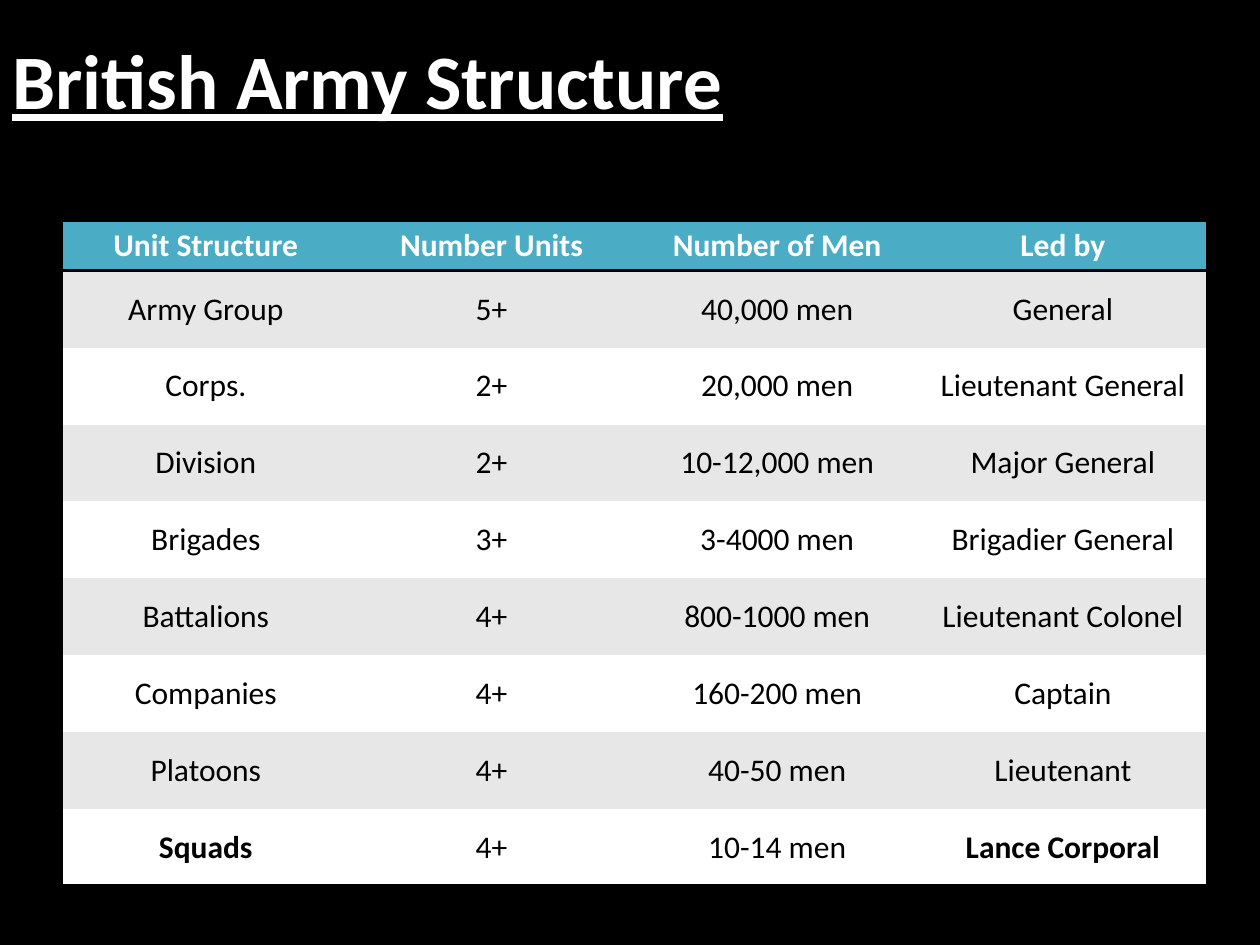
from lxml import etree
from pptx import Presentation
from pptx.dml.color import RGBColor
from pptx.enum.text import MSO_ANCHOR, PP_ALIGN
from pptx.oxml.ns import qn
from pptx.util import Inches, Pt

MIDDLE = MSO_ANCHOR.MIDDLE
CENTER = PP_ALIGN.CENTER
FONT = "Calibri"
PLAIN_STYLE = "{2D5ABB26-0587-4C30-8999-92F81FD0307C}"  # no fill, no grid
COLORS = {
    "black": "000000",
    "white": "FFFFFF",
    "teal": "4BACC6",
    "gray": "E7E7E7",
}
ROWS = [
    ("Unit Structure", "Number Units", "Number of Men", "Led by"),
    ("Army Group", "5+", "40,000 men", "General"),
    ("Corps.", "2+", "20,000 men", "Lieutenant General"),
    ("Division", "2+", "10-12,000 men", "Major General"),
    ("Brigades", "3+", "3-4000 men", "Brigadier General"),
    ("Battalions", "4+", "800-1000 men", "Lieutenant Colonel"),
    ("Companies", "4+", "160-200 men", "Captain"),
    ("Platoons", "4+", "40-50 men", "Lieutenant"),
    ("Squads", "4+", "10-14 men", "Lance Corporal"),
]
BOLD = {"Squads", "Lance Corporal"}


def rgb(name):
    return RGBColor.from_string(COLORS[name])


def set_font(para, size, color, bold):
    font = para.font
    font.name = FONT
    font.size = Pt(size)
    font.bold = bold
    font.color.rgb = rgb(color)


def add_title(slide, text):
    box = slide.shapes.add_textbox(0, 0, Inches(9), Inches(1.25))
    frame = box.text_frame
    frame.word_wrap = True
    frame.vertical_anchor = MIDDLE
    para = frame.paragraphs[0]
    para.text = text
    set_font(para, 44, "white", True)
    para.font.underline = True


def add_border(cell, side):
    """Draw a black rule on side "T" or "B"; call before the fill is set."""
    props = cell._tc.get_or_add_tcPr()
    line = etree.SubElement(props, qn(f"a:ln{side}"), w=str(Pt(2)))
    fill = etree.SubElement(line, qn("a:solidFill"))
    etree.SubElement(fill, qn("a:srgbClr"), val=COLORS["black"])


def fill_cell(cell, text, back, color, bold, sides):
    for side in sides:
        add_border(cell, side)
    cell.fill.solid()
    cell.fill.fore_color.rgb = rgb(back)
    cell.vertical_anchor = MIDDLE
    para = cell.text_frame.paragraphs[0]
    para.text = text
    para.alignment = CENTER
    set_font(para, 18, color, bold)


def add_units(slide):
    count = len(ROWS)
    frame = slide.shapes.add_table(
        count, len(ROWS[0]), Inches(0.5), Inches(1.75), Inches(9.07), Inches(5.26)
    )
    table = frame.table
    table._tbl.tblPr.find(qn("a:tableStyleId")).text = PLAIN_STYLE
    for r, texts in enumerate(ROWS):
        head = r == 0
        table.rows[r].height = Inches(0.39 if head else 0.61)
        back = "teal" if head else "gray" if r % 2 else "white"
        color = "white" if head else "black"
        sides = "TB" if head else "B" if r == count - 1 else ""
        for c, text in enumerate(texts):
            bold = head or text in BOLD
            fill_cell(table.cell(r, c), text, back, color, bold, sides)


def main():
    deck = Presentation()
    deck.slide_width = Inches(10)
    deck.slide_height = Inches(7.5)
    slide = deck.slides.add_slide(deck.slide_layouts[6])
    slide.background.fill.solid()
    slide.background.fill.fore_color.rgb = rgb("black")
    add_title(slide, "British Army Structure")
    add_units(slide)
    deck.save("out.pptx")


if __name__ == "__main__":
    main()
